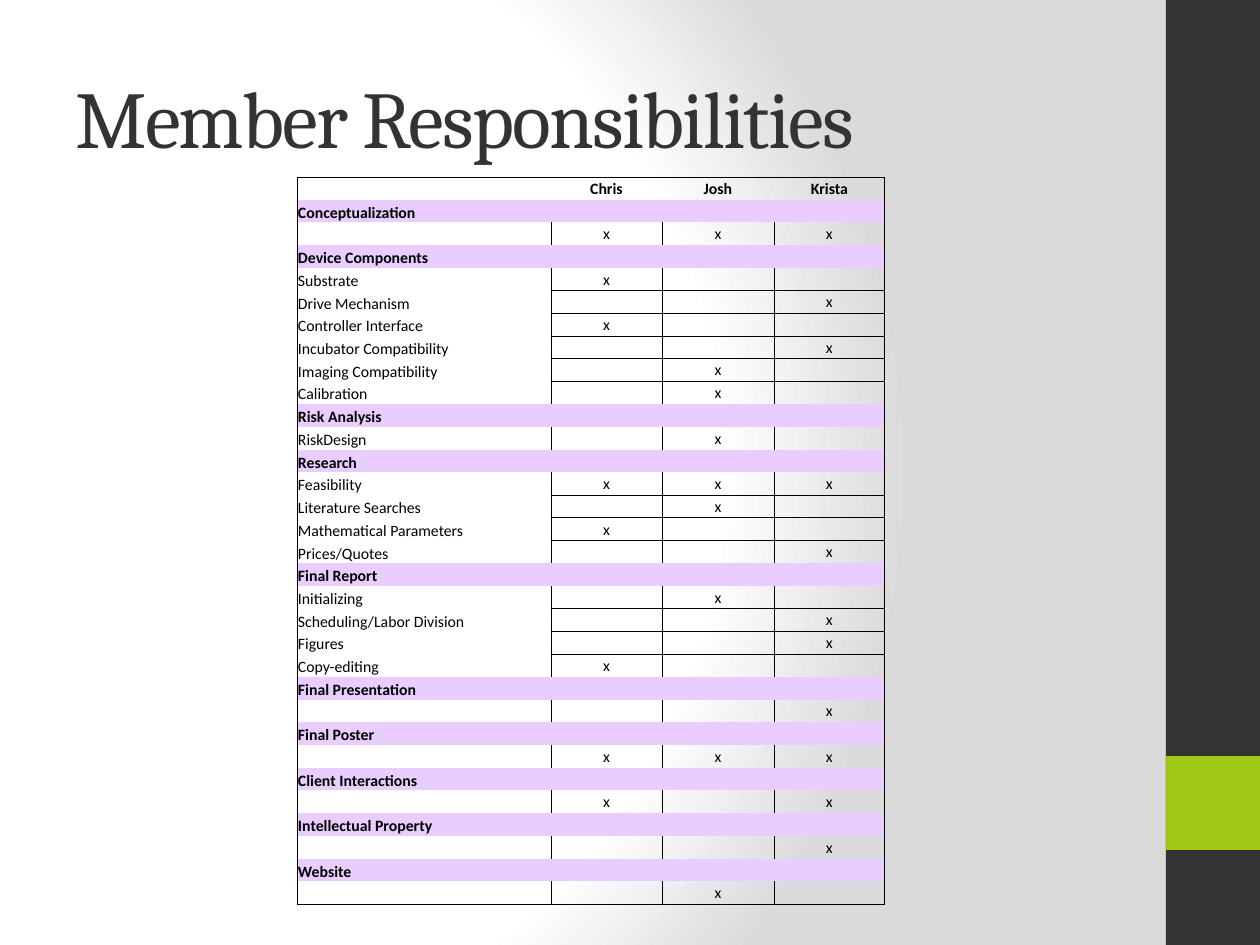
"""Build the Member Responsibilities slide."""
from lxml import etree
from pptx import Presentation
from pptx.dml.color import RGBColor
from pptx.enum.shapes import MSO_SHAPE
from pptx.enum.text import MSO_ANCHOR, PP_ALIGN
from pptx.oxml import parse_xml
from pptx.oxml.ns import nsdecls, qn
from pptx.util import Pt

RECT = MSO_SHAPE.RECTANGLE
MIDDLE, BOTTOM = MSO_ANCHOR.MIDDLE, MSO_ANCHOR.BOTTOM
LEFT, CENTER = PP_ALIGN.LEFT, PP_ALIGN.CENTER

TITLE = "Member Responsibilities"
MEMBERS = ["Chris", "Josh", "Krista"]
SECTIONS = [
    ("Conceptualization", [("", "Chris Josh Krista")]),
    ("Device Components", [
        ("Substrate", "Chris"),
        ("Drive Mechanism", "Krista"),
        ("Controller Interface", "Chris"),
        ("Incubator Compatibility", "Krista"),
        ("Imaging Compatibility", "Josh"),
        ("Calibration", "Josh"),
    ]),
    ("Risk Analysis", [("RiskDesign", "Josh")]),
    ("Research", [
        ("Feasibility", "Chris Josh Krista"),
        ("Literature Searches", "Josh"),
        ("Mathematical Parameters", "Chris"),
        ("Prices/Quotes", "Krista"),
    ]),
    ("Final Report", [
        ("Initializing", "Josh"),
        ("Scheduling/Labor Division", "Krista"),
        ("Figures", "Krista"),
        ("Copy-editing", "Chris"),
    ]),
    ("Final Presentation", [("", "Krista")]),
    ("Final Poster", [("", "Chris Josh Krista")]),
    ("Client Interactions", [("", "Chris Krista")]),
    ("Intellectual Property", [("", "Krista")]),
    ("Website", [("", "Josh")]),
]

THEME = {
    "dark": "333333", "accent": "A2C816", "band": "E9CDFF", "ink": "000000",
    "light": "FFFFFF", "shade": "DADADA",
    "title_font": "Cambria", "body_font": "Calibri",
    "title_size": 46, "body_size": 9, "border": 0.5,
}
SCALE = 914400 // 126
SLIDE = (1260, 945)
TITLE_BOX = (63, 38, 1050, 157)
BARS = [((1166, 0, 94, 945), "dark"), ((1166, 756, 94, 94), "accent")]
TABLE_BOX = (297, 177, 588, 728)
COLUMNS = [254, 111, 112, 111]
PLAIN_STYLE = "{2D5ABB26-0587-4C30-8999-92F81FD0307C}"


def px(*values):
    return [v * SCALE for v in values]


def color(name):
    return RGBColor.from_string(THEME[name])


def add_run(p, text, kind, name, bold=False):
    r = p.add_run()
    r.text = text
    r.font.name = THEME[kind + "_font"]
    r.font.size = Pt(THEME[kind + "_size"])
    r.font.color.rgb = color(name)
    r.font.bold = bold
    return r


def set_background(slide):
    stops = [(0, "light"), (75, "light"), (100, "shade")]
    gs = "".join(f'<a:gs pos="{pos * 1000}"><a:srgbClr val="{THEME[name]}"/></a:gs>'
                 for pos, name in stops)
    fill = slide.background.fill
    fill.gradient()
    old = slide.background._cSld.find(".//" + qn("a:gradFill"))
    old.getparent().replace(old, parse_xml(
        f'<a:gradFill {nsdecls("a")} rotWithShape="1"><a:gsLst>{gs}</a:gsLst>'
        '<a:path path="circle"><a:fillToRect l="20000" t="50000" r="100000" b="50000"/>'
        '</a:path></a:gradFill>'))


def set_borders(cell, sides):
    tcPr = cell._tc.get_or_add_tcPr()
    for side in "LRTB":
        ln = etree.SubElement(tcPr, qn("a:ln" + side), w=str(Pt(THEME["border"])))
        if side in sides:
            fill = etree.SubElement(ln, qn("a:solidFill"))
            etree.SubElement(fill, qn("a:srgbClr"), val=THEME["ink"])
        else:
            etree.SubElement(ln, qn("a:noFill"))


def table_rows():
    rows = [("header", ["", *MEMBERS])]
    for section, tasks in SECTIONS:
        rows.append(("section", [section, "", "", ""]))
        for task, owners in tasks:
            marks = ["x" if m in owners.split() else "" for m in MEMBERS]
            rows.append(("task", [task, *marks]))
    return rows


def border_sides(kinds, i, j):
    last = len(kinds) - 1
    task = kinds[i] == "task"
    sides = ""
    if j == 0 or task:
        sides += "L"
    if j == len(MEMBERS) or task:
        sides += "R"
    if i == 0 or (j and task and kinds[i - 1] == "task"):
        sides += "T"
    if i == last or (j and task and kinds[i + 1] == "task"):
        sides += "B"
    return sides


def fill_cell(cell, text, kind, is_label):
    cell.margin_left, cell.margin_right, cell.margin_top, cell.margin_bottom = px(1, 1, 1, 0)
    cell.vertical_anchor = BOTTOM if is_label else MIDDLE
    p = cell.text_frame.paragraphs[0]
    p.alignment = LEFT if is_label else CENTER
    if text:
        add_run(p, text, "body", "ink", kind != "task")
    else:
        etree.SubElement(p._p, qn("a:endParaRPr"), sz=str(THEME["body_size"] * 100))
    if kind == "section":
        cell.fill.solid()
        cell.fill.fore_color.rgb = color("band")
    else:
        cell.fill.background()


def add_responsibilities(slide):
    rows = table_rows()
    kinds = [kind for kind, _ in rows]
    frame = slide.shapes.add_table(len(rows), len(COLUMNS), *px(*TABLE_BOX))
    table = frame.table
    table.first_row = table.horz_banding = False
    table._tbl.tblPr.find(qn("a:tableStyleId")).text = PLAIN_STYLE
    for column, width in zip(table.columns, COLUMNS):
        column.width = width * SCALE
    for i, (kind, texts) in enumerate(rows):
        table.rows[i].height = TABLE_BOX[3] * SCALE // len(rows)
        for j, text in enumerate(texts):
            cell = table.cell(i, j)
            set_borders(cell, border_sides(kinds, i, j))
            fill_cell(cell, text, kind, j == 0)


def main():
    prs = Presentation()
    prs.slide_width, prs.slide_height = px(*SLIDE)
    slide = prs.slides.add_slide(prs.slide_layouts[5])
    set_background(slide)

    for box, name in BARS:
        sp = slide.shapes.add_shape(RECT, *px(*box))
        sp.shadow.inherit = False
        sp.fill.solid()
        sp.fill.fore_color.rgb = color(name)
        sp.line.fill.background()

    title = slide.shapes.title
    title.left, title.top, title.width, title.height = px(*TITLE_BOX)
    tf = title.text_frame
    tf.word_wrap = True
    tf.vertical_anchor = MIDDLE
    p = tf.paragraphs[0]
    p.alignment = LEFT
    r = add_run(p, TITLE, "title", "dark")
    r.font._element.set("spc", "-100")

    add_responsibilities(slide)
    prs.save("out.pptx")


if __name__ == "__main__":
    main()
